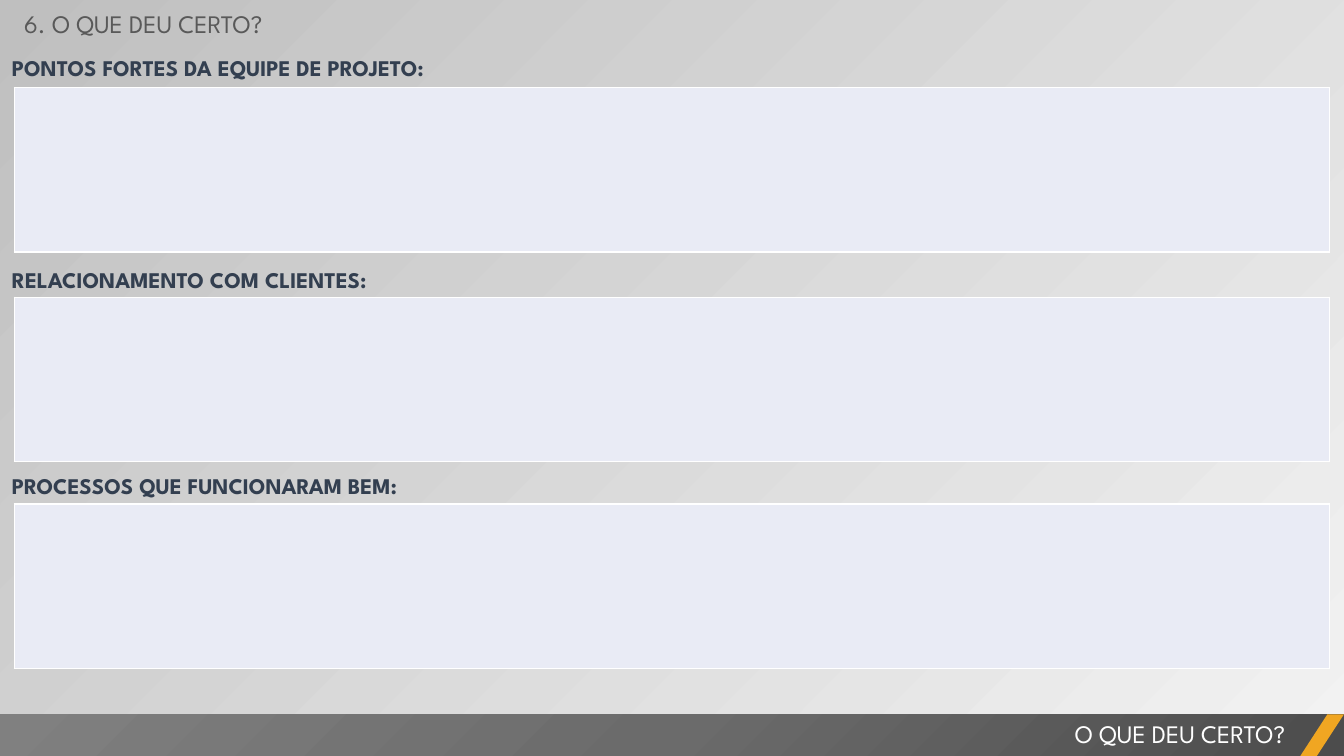
import pptx
import pptx.dml.color
import pptx.enum.shapes
import pptx.enum.text
import pptx.oxml
import pptx.oxml.ns
import pptx.util
from pptx.util import Cm, Pt

FONT = "League Spartan"
SLIDE_W, SLIDE_H = 33.87, 19.05
SHAPE = pptx.enum.shapes.MSO_SHAPE
ALIGN = pptx.enum.text.PP_ALIGN
NS = pptx.oxml.ns.nsdecls("a")


def rgb(value):
    return pptx.dml.color.RGBColor.from_string(value)


def set_gradient(fill, owner, stops, direction):
    """Fill owner with (percent, colour) stops along the given direction XML."""
    fill.gradient()
    old = owner.xpath(".//a:gradFill")[0]
    gs = "".join(f'<a:gs pos="{pos * 1000}"><a:srgbClr val="{color}"/></a:gs>'
                 for pos, color in stops)
    new = pptx.oxml.parse_xml(
        f'<a:gradFill {NS} rotWithShape="1"><a:gsLst>{gs}</a:gsLst>{direction}</a:gradFill>')
    old.getparent().replace(old, new)


def add_text(s, text, box, size=18, color="FFFFFF", bold=False, align=ALIGN.LEFT,
             inset=(0.25, 0.13), line=None, before=None):
    tb = s.shapes.add_textbox(*map(Cm, box))
    tf = tb.text_frame
    tf.word_wrap = True
    tf.auto_size = pptx.enum.text.MSO_AUTO_SIZE.SHAPE_TO_FIT_TEXT
    tf.margin_left = tf.margin_right = Cm(inset[0])
    tf.margin_top = tf.margin_bottom = Cm(inset[1])
    p = tf.paragraphs[0]
    p.alignment, p.line_spacing, p.space_before = align, line, before
    r = p.add_run()
    r.text = text
    r.font.name, r.font.size, r.font.bold = FONT, Pt(size), bold
    r.font.color.rgb = rgb(color)


def add_plain_shape(s, kind, box):
    sp = s.shapes.add_shape(kind, *map(Cm, box))
    sp.shadow.inherit = False
    sp.line.fill.background()
    return sp


def add_answer_table(s, box):
    """One empty cell with a thin white border."""
    table = s.shapes.add_table(1, 1, *map(Cm, box)).table
    table.first_row = table.horz_banding = False
    cell = table.cell(0, 0)
    cell.fill.solid()
    cell.fill.fore_color.rgb = rgb("E9EBF5")
    for i, side in enumerate(("lnL", "lnR", "lnT", "lnB")):
        cell._tc.get_or_add_tcPr().insert(i, pptx.oxml.parse_xml(
            f'<a:{side} {NS} w="12700"><a:solidFill><a:srgbClr val="FFFFFF"/>'
            f'</a:solidFill></a:{side}>'))


def add_section(s, label, box, table_offset, line):
    x, y, w, h = box
    add_answer_table(s, (x + 0.36, y + table_offset, w - 0.72, h - table_offset))
    add_text(s, label, (x, y, 19.38, 1.02), size=16, color="333F50", bold=True,
             inset=(0.3, 0.15), line=line, before=Pt(3.2))


def add_footer(s, text, box):
    x, y, w, h = box
    band = add_plain_shape(s, SHAPE.RECTANGLE, box)
    set_gradient(band.fill, band._element,
                 [(0, "4C4C4C"), (50, "6B6B6B"), (100, "808080")],
                 '<a:path path="circle"><a:fillToRect l="100000" t="100000"/></a:path>')
    add_text(s, text, (x + w - 20.53, y - 0.02, 19.3, 1.02), align=ALIGN.RIGHT)
    slash = add_plain_shape(s, SHAPE.PARALLELOGRAM, (x + w - 1.1, y, 1.1, h))
    slash.adjustments[0] = 0.65
    slash.fill.solid()
    slash.fill.fore_color.rgb = rgb("F0A622")


def build_slide(prs):
    s = prs.slides.add_slide(prs.slide_layouts[6])
    set_gradient(s.background.fill, s._element, [(0, "F2F2F2"), (100, "BFBFBF")],
                 '<a:lin ang="13500000" scaled="0"/>')
    sections = [
        ("PONTOS FORTES DA EQUIPE DE PROJETO:", 1.14, 1.07, Pt(21.5)),
        ("RELACIONAMENTO COM CLIENTES:", 6.48, 1.01, Pt(21.5)),
        ("PROCESSOS QUE FUNCIONARAM BEM:", 11.61, 1.09, 1.2),
    ]
    for label, top, offset, line in sections:
        add_section(s, label, (0, top, SLIDE_W, offset + 4.14), offset, line)
    add_footer(s, "O QUE DEU CERTO?", (0, 18, SLIDE_W, SLIDE_H - 18))
    add_text(s, "6. O QUE DEU CERTO?", (0.36, 0.08, 13.49, 1.02), color="595959")


def main():
    prs = pptx.Presentation()
    prs.slide_width, prs.slide_height = Cm(SLIDE_W), Cm(SLIDE_H)
    build_slide(prs)
    prs.save("out.pptx")


if __name__ == "__main__":
    main()
